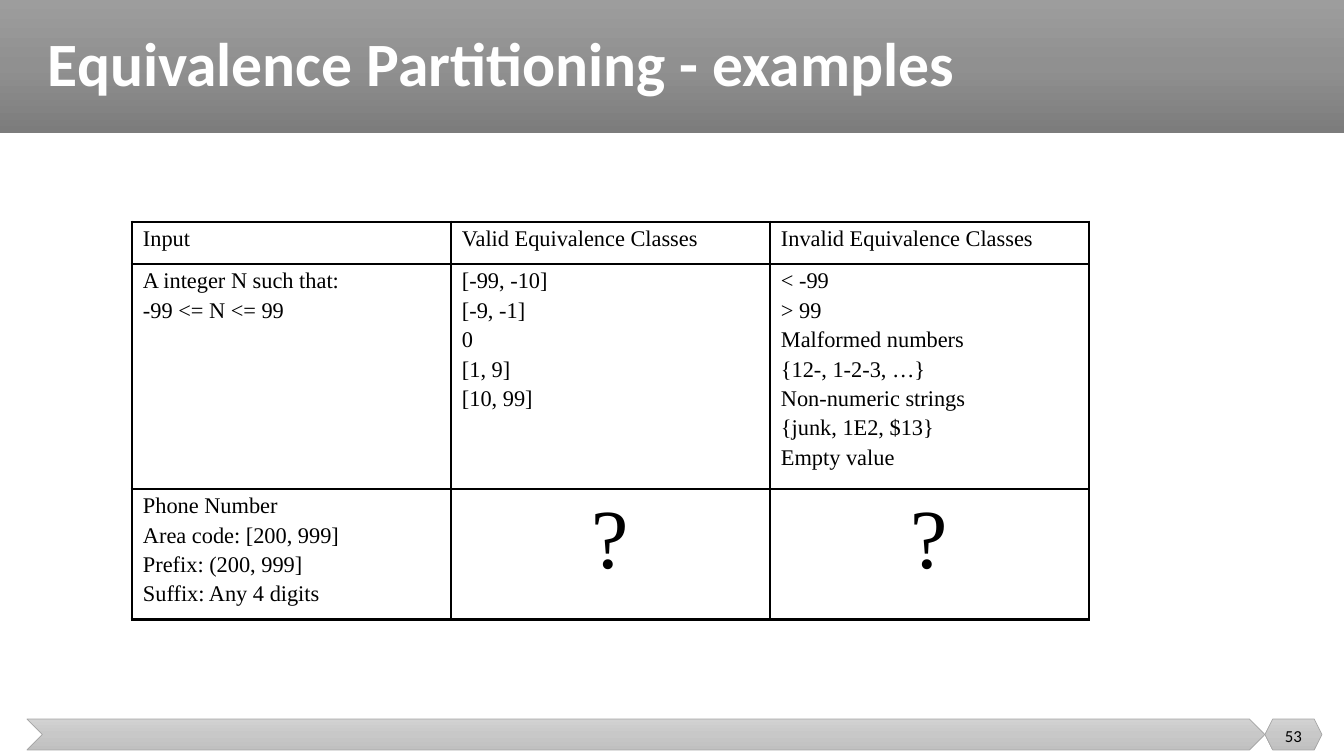
from copy import deepcopy
from dataclasses import dataclass

from lxml import etree
from pptx import Presentation
from pptx import util as u
from pptx.dml.color import RGBColor
from pptx.enum import shapes, text
from pptx.oxml.ns import qn

TITLE = "Equivalence Partitioning - examples"
PAGE_NUMBER = "53"
CLASSES = [
    [["Input"], ["Valid Equivalence Classes"], ["Invalid Equivalence Classes"]],
    [
        ["A integer N such that:", "-99 <= N <= 99"],
        ["[-99, -10]", "[-9, -1]", "0", "[1, 9]", "[10, 99]"],
        ["< -99", "> 99", "Malformed numbers", "{12-, 1-2-3, …}",
         "Non-numeric strings", "{junk, 1E2, $13}", "Empty value"],
    ],
    [
        ["Phone Number", "Area code: [200, 999]", "Prefix: (200, 999]",
         "Suffix: Any 4 digits"],
        ["?"],
        ["?"],
    ],
]


@dataclass(frozen=True)
class Theme:
    heading_font: str = "Calibri"
    body_font: str = "Times New Roman"
    ink: str = "000000"
    white: str = "FFFFFF"
    edge: str = "A5A5A5"
    header_band: tuple = ("9D9D9D", "909090", "7C7C7C")
    footer_band: tuple = ("D2D2D2", "C8C8C8", "C0C0C0")
    title_size: int = 44
    body_size: int = 16
    question_size: int = 60
    number_size: int = 12
    outer_line: float = 2.25
    inner_line: float = 1


THEME = Theme()
SLIDE_W, SLIDE_H = 1344, 756
HEADER_H = 133
FOOTER_LEFT, FOOTER_TOP, FOOTER_H = 27, 719, 31
FOOTER_W, NUMBER_W = 1238, 57
TABLE_LEFT, TABLE_TOP, COLUMN_W = 132, 222, 319
ROW_HEIGHTS = [42, 211, 123]


def px(length):
    return u.Emu(round(length * 914400 / 100.8))


def write(frame, lines, size, font, color=THEME.ink, bold=False,
          align=text.PP_ALIGN.LEFT, line_spacing=None, before_percent=None):
    frame.word_wrap = True
    for index, line in enumerate(lines):
        paragraph = frame.paragraphs[0] if index == 0 else frame.add_paragraph()
        paragraph.alignment = align
        if line_spacing:
            paragraph.line_spacing = line_spacing
        if before_percent:
            paragraph.space_before = u.Pt(0)
            before = paragraph._p.pPr.find(qn("a:spcBef"))
            before.remove(before[0])
            etree.SubElement(before, qn("a:spcPct"), val=str(before_percent * 1000))
        run = paragraph.add_run()
        run.text = line
        run.font.size = u.Pt(size)
        run.font.name = font
        run.font.bold = bold
        run.font.color.rgb = RGBColor.from_string(color)


def add_band(slide, preset, box, colors, edge=None):
    band = slide.shapes.add_shape(preset, *map(px, box))
    band.shadow.inherit = False
    band.fill.gradient()
    band.fill.gradient_angle = 270
    first_stop = band.fill.gradient_stops[0]._gs
    first_stop.addnext(deepcopy(first_stop))
    for stop, position, color in zip(band.fill.gradient_stops, (0, 0.5, 1), colors):
        stop.position = position
        stop.color.rgb = RGBColor.from_string(color)
    if edge:
        band.line.color.rgb = RGBColor.from_string(edge)
        band.line.width = u.Pt(0.5)
    else:
        band.line.fill.background()


def add_label(slide, box, label, **style):
    frame = slide.shapes.add_textbox(*map(px, box)).text_frame
    frame.vertical_anchor = text.MSO_ANCHOR.MIDDLE
    write(frame, [label], **style)


def set_borders(cell, outer_sides):
    properties = cell._tc.get_or_add_tcPr()
    for side, is_outer in zip("LRTB", outer_sides):
        width = THEME.outer_line if is_outer else THEME.inner_line
        line = etree.SubElement(properties, qn(f"a:ln{side}"), w=str(u.Pt(width)))
        fill = etree.SubElement(line, qn("a:solidFill"))
        etree.SubElement(fill, qn("a:srgbClr"), val=THEME.ink)


def add_classes_table(slide):
    rows, columns = len(CLASSES), len(CLASSES[0])
    table = slide.shapes.add_table(
        rows, columns, px(TABLE_LEFT), px(TABLE_TOP),
        px(COLUMN_W * columns), px(sum(ROW_HEIGHTS))).table
    table.first_row = table.horz_banding = False
    for column in table.columns:
        column.width = px(COLUMN_W)
    for r, entries in enumerate(CLASSES):
        table.rows[r].height = px(ROW_HEIGHTS[r])
        for c, lines in enumerate(entries):
            cell = table.cell(r, c)
            cell.margin_left = cell.margin_right = px(11)
            cell.margin_top = cell.margin_bottom = px(5)
            set_borders(cell, (c == 0, c == columns - 1, r == 0, r == rows - 1))
            cell.fill.background()
            is_question = lines == ["?"]
            write(cell.text_frame, lines, font=THEME.body_font, before_percent=20,
                  size=THEME.question_size if is_question else THEME.body_size,
                  align=text.PP_ALIGN.CENTER if is_question else text.PP_ALIGN.LEFT)


def main():
    deck = Presentation()
    deck.slide_width, deck.slide_height = px(SLIDE_W), px(SLIDE_H)
    slide = deck.slides.add_slide(deck.slide_layouts[6])
    number_left = FOOTER_LEFT + FOOTER_W
    preset = shapes.MSO_SHAPE
    add_band(slide, preset.RECTANGLE, (0, 0, SLIDE_W, HEADER_H), THEME.header_band)
    add_band(slide, preset.CHEVRON, (FOOTER_LEFT, FOOTER_TOP, FOOTER_W, FOOTER_H),
             THEME.footer_band, THEME.edge)
    add_band(slide, preset.HEXAGON, (number_left, FOOTER_TOP, NUMBER_W, FOOTER_H),
             THEME.footer_band, THEME.edge)
    add_label(slide, (38, 0, 1284, HEADER_H), TITLE, size=THEME.title_size,
              font=THEME.heading_font, color=THEME.white, bold=True, line_spacing=0.9)
    add_classes_table(slide)
    add_label(slide, (number_left, 716, NUMBER_W, 40), PAGE_NUMBER,
              size=THEME.number_size, font=THEME.heading_font,
              align=text.PP_ALIGN.CENTER)
    deck.save("out.pptx")


if __name__ == "__main__":
    main()
